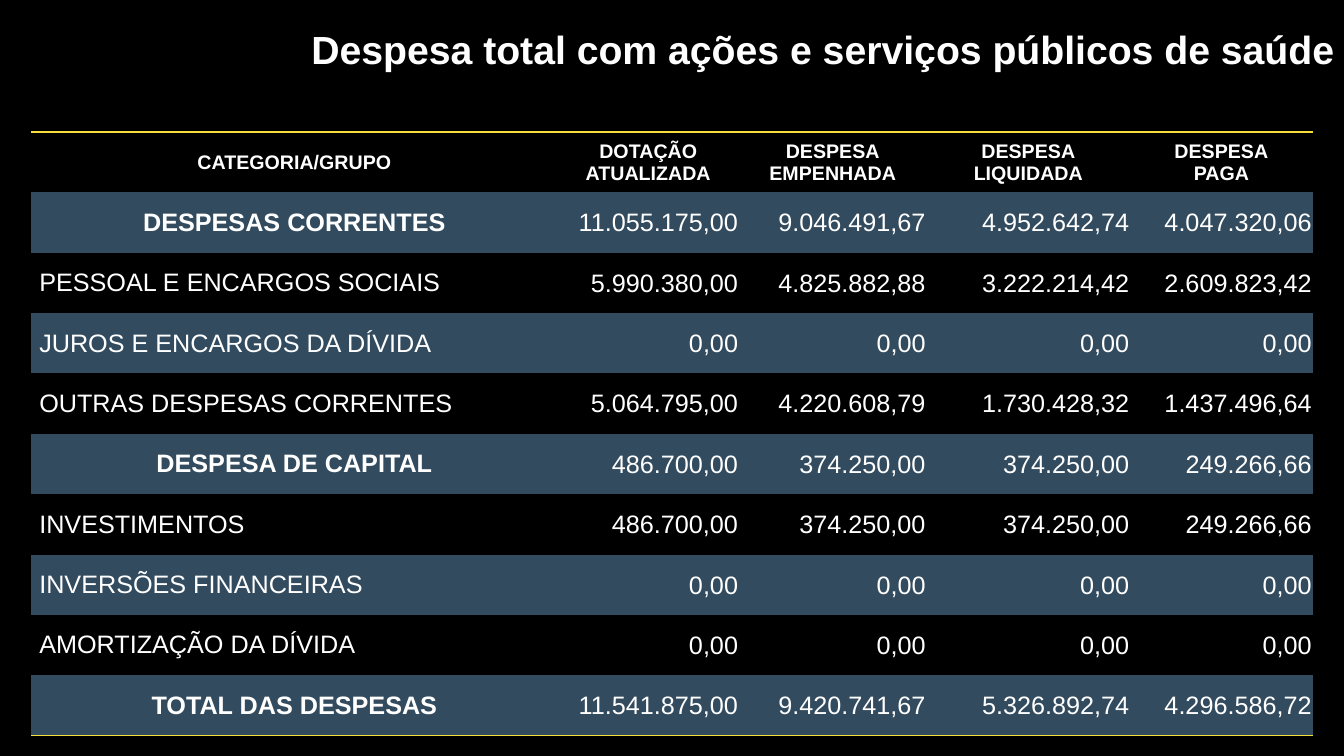
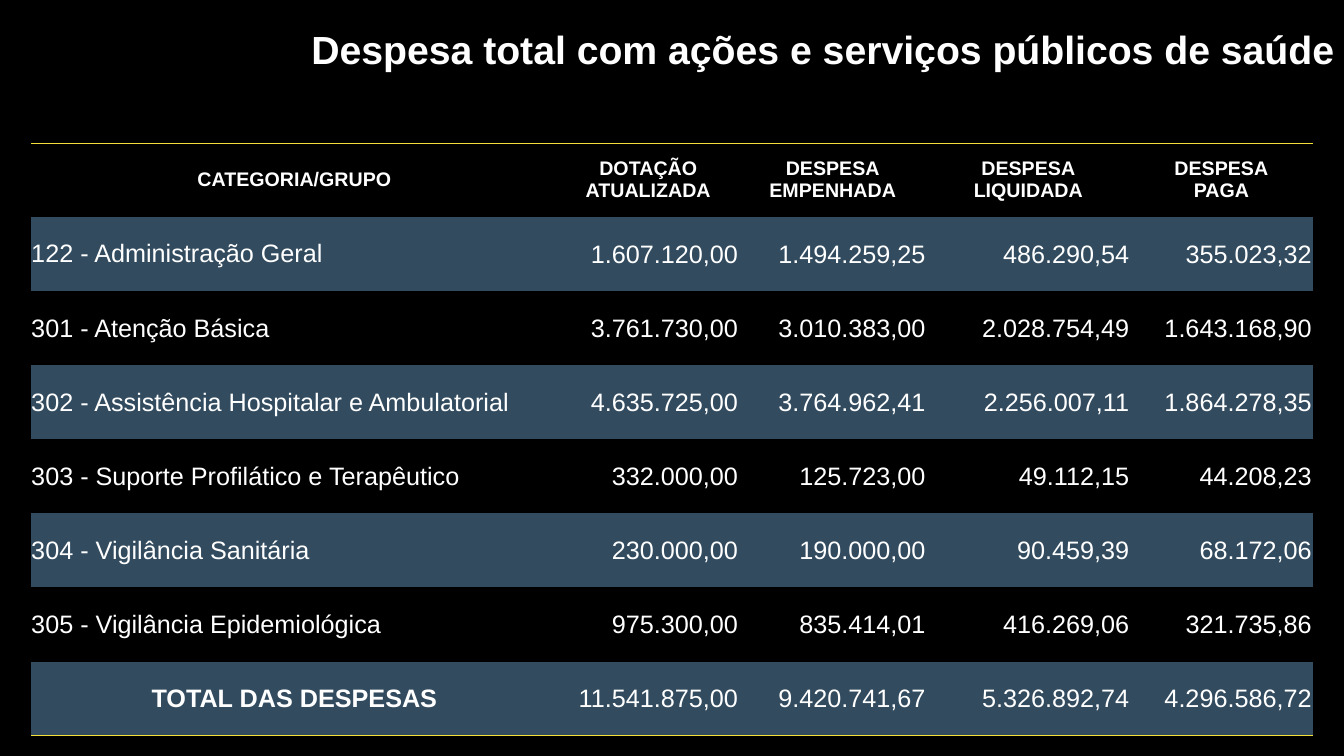
"""Build two slides of health spending tables."""
from dataclasses import dataclass

from lxml import etree
from pptx import Presentation
from pptx.dml.color import RGBColor
from pptx.enum.text import MSO_ANCHOR, MSO_AUTO_SIZE, PP_ALIGN
from pptx.oxml.ns import qn
from pptx.util import Inches, Pt

LEFT, MID, RIGHT = PP_ALIGN.LEFT, PP_ALIGN.CENTER, PP_ALIGN.RIGHT
MIDDLE = MSO_ANCHOR.MIDDLE
GROW = MSO_AUTO_SIZE.SHAPE_TO_FIT_TEXT

BLACK = RGBColor(0x00, 0x00, 0x00)
WHITE = RGBColor(0xFF, 0xFF, 0xFF)
BAND = RGBColor(0x32, 0x4B, 0x5F)
GOLD = RGBColor(0xF4, 0xDE, 0x3A)

FONT = "Arial"
PLAIN = "{2D5ABB26-0587-4C30-8999-92F81FD0307C}"
TITLE = "Despesa total com ações e serviços públicos de saúde"
HEADS = ("CATEGORIA/GRUPO", "DOTAÇÃO\nATUALIZADA", "DESPESA\nEMPENHADA",
         "DESPESA\nLIQUIDADA", "DESPESA\nPAGA")
WIDTHS = (5.22, 1.8, 1.86, 2.02, 1.81)
FOOT = 7.3


@dataclass(frozen=True)
class Row:
    """One line of a table; a group line has a bold centred label."""
    label: str
    sums: tuple[str, ...]
    group: bool = False


@dataclass(frozen=True)
class Sheet:
    """One slide's table: its top, label indent and rows."""
    top: float
    indent: float
    rows: tuple[Row, ...]


NIL = ("0,00",) * 4
FUNDS = ("486.700,00", "374.250,00", "374.250,00", "249.266,66")
TOTAL = Row("TOTAL DAS DESPESAS", ("11.541.875,00", "9.420.741,67", "5.326.892,74", "4.296.586,72"), True)

SHEETS = (
    Sheet(1.31, 0.08, (
        Row("DESPESAS CORRENTES", ("11.055.175,00", "9.046.491,67", "4.952.642,74", "4.047.320,06"), True),
        Row("PESSOAL E ENCARGOS SOCIAIS", ("5.990.380,00", "4.825.882,88", "3.222.214,42", "2.609.823,42")),
        Row("JUROS E ENCARGOS DA DÍVIDA", NIL),
        Row("OUTRAS DESPESAS CORRENTES", ("5.064.795,00", "4.220.608,79", "1.730.428,32", "1.437.496,64")),
        Row("DESPESA DE CAPITAL", FUNDS, True),
        Row("INVESTIMENTOS", FUNDS),
        Row("INVERSÕES FINANCEIRAS", NIL),
        Row("AMORTIZAÇÃO DA DÍVIDA", NIL),
        TOTAL,
    )),
    Sheet(1.42, 0, (
        Row("122 - Administração Geral", ("1.607.120,00", "1.494.259,25", "486.290,54", "355.023,32")),
        Row("301 - Atenção Básica", ("3.761.730,00", "3.010.383,00", "2.028.754,49", "1.643.168,90")),
        Row("302 - Assistência Hospitalar e Ambulatorial",
            ("4.635.725,00", "3.764.962,41", "2.256.007,11", "1.864.278,35")),
        Row("303 - Suporte Profilático e Terapêutico", ("332.000,00", "125.723,00", "49.112,15", "44.208,23")),
        Row("304 - Vigilância Sanitária", ("230.000,00", "190.000,00", "90.459,39", "68.172,06")),
        Row("305 - Vigilância Epidemiológica", ("975.300,00", "835.414,01", "416.269,06", "321.735,86")),
        TOTAL,
    )),
)


def write(frame, text: str, *, size: int = 18, bold: bool = False, align=LEFT) -> None:
    frame.text = text
    for para in frame.paragraphs:
        para.alignment = align
        font = para.font
        font.name, font.size, font.bold = FONT, Pt(size), bold
        font.color.rgb = WHITE


def pad(cell, left: float, top: float, right: float) -> None:
    cell.vertical_anchor = MIDDLE
    cell.margin_left, cell.margin_top = Inches(left), Inches(top)
    cell.margin_right, cell.margin_bottom = Inches(right), Inches(0)


def shade(cell, index: int) -> None:
    if index % 2:
        cell.fill.solid()
        cell.fill.fore_color.rgb = BAND
    else:
        cell.fill.background()


def rule(cell, side: str) -> None:
    line = etree.Element(qn(f"a:{side}"), w=str(Pt(1)))
    fill = etree.SubElement(line, qn("a:solidFill"))
    etree.SubElement(fill, qn("a:srgbClr"), val=str(GOLD))
    cell._tc.get_or_add_tcPr().insert(0, line)


def add_title(slide) -> None:
    box = slide.shapes.add_textbox(Inches(2.79), Inches(0.2), Inches(10.54), Inches(0.57))
    frame = box.text_frame
    frame.word_wrap, frame.auto_size = True, GROW
    write(frame, TITLE, size=28, bold=True, align=RIGHT)


def add_grid(slide, sheet: Sheet) -> None:
    count = len(sheet.rows) + 1
    table = slide.shapes.add_table(
        count, len(HEADS), Inches(0.31), Inches(sheet.top),
        Inches(sum(WIDTHS)), Inches(FOOT - sheet.top)).table
    table.first_row = table.horz_banding = False
    table._tbl.tblPr.find(qn("a:tableStyleId")).text = PLAIN
    for col, width in zip(table.columns, WIDTHS):
        col.width = Inches(width)

    for col, head in enumerate(HEADS):
        cell = table.cell(0, col)
        write(cell.text_frame, head, size=14, bold=True, align=MID)
        pad(cell, 0, 0, 0)
        shade(cell, 0)
        rule(cell, "lnT")

    for index, row in enumerate(sheet.rows, 1):
        label = table.cell(index, 0)
        write(label.text_frame, row.label, bold=row.group, align=MID if row.group else LEFT)
        pad(label, 0 if row.group else sheet.indent, 0, 0)
        shade(label, index)
        for col, value in enumerate(row.sums, 1):
            cell = table.cell(index, col)
            write(cell.text_frame, value, align=RIGHT)
            pad(cell, 0.01, 0.01, 0.01)
            shade(cell, index)

    for col in range(len(HEADS)):
        rule(table.cell(count - 1, col), "lnB")


def main() -> None:
    deck = Presentation()
    deck.slide_width, deck.slide_height = Inches(13.33), Inches(7.5)
    back = deck.slide_master.background.fill
    back.solid()
    back.fore_color.rgb = BLACK
    for sheet in SHEETS:
        slide = deck.slides.add_slide(deck.slide_layouts[6])
        add_grid(slide, sheet)
        add_title(slide)
    deck.save("out.pptx")


if __name__ == "__main__":
    main()
